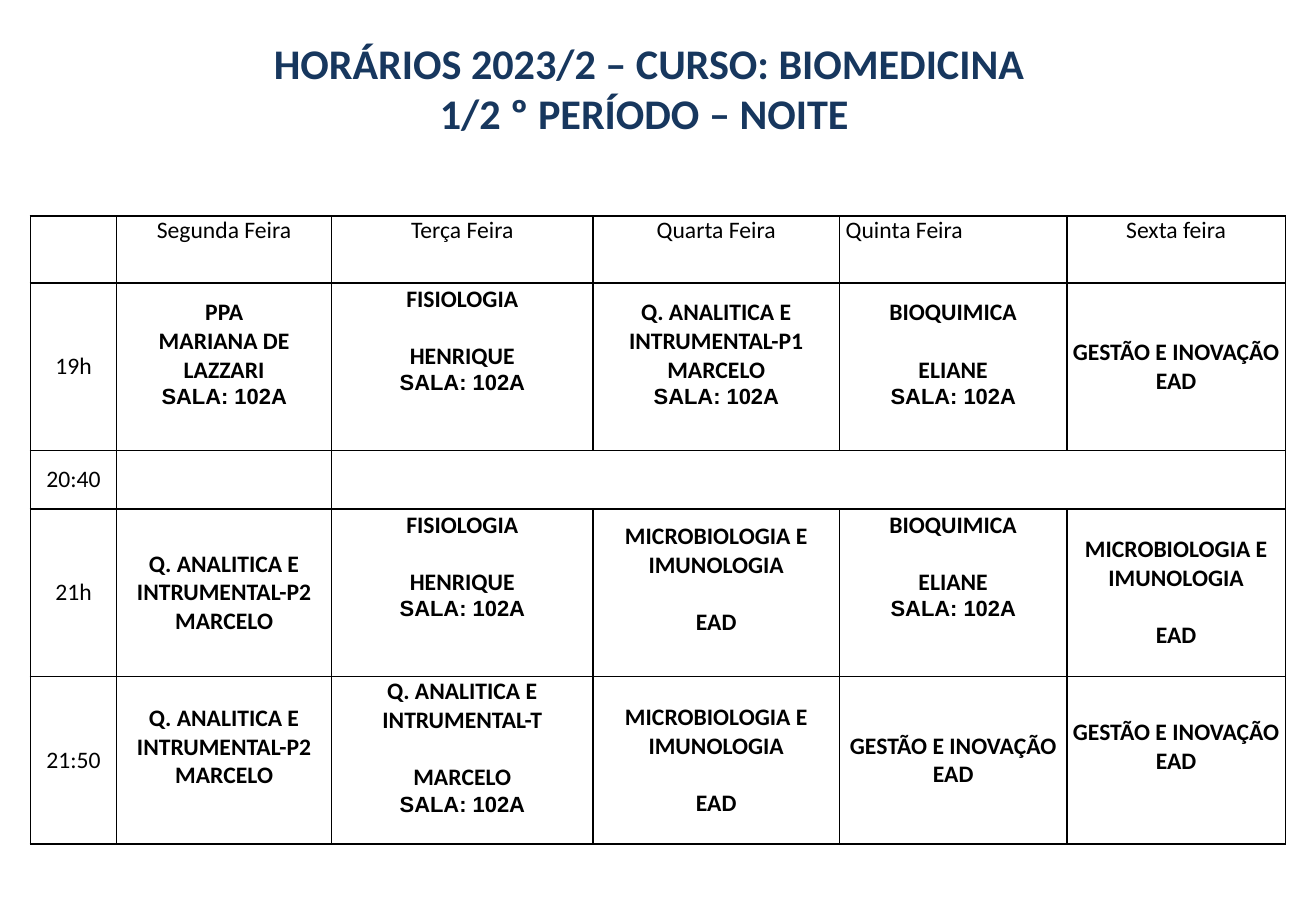
from dataclasses import dataclass

from pptx import Presentation
from pptx import util as u
from pptx.dml.color import RGBColor
from pptx.enum import text
from pptx.oxml import parse_xml
from pptx.oxml.ns import nsdecls


@dataclass(frozen=True)
class Theme:
    navy: str = "17375E"
    ink: str = "000000"
    face: str = "Calibri"
    room_face: str = "Arial"
    title: int = 25
    body: int = 14
    room: int = 13
    gap: int = 17
    rule: float = 1


@dataclass(frozen=True)
class Lesson:
    """One class; gap parts subject from staff, lift counts lines raised from the middle."""
    lines: str
    gap: bool = False
    lift: int = 0


THEME = Theme()
ROOM = "SALA: 102A"
LIFT = 0.22
COLS = [0.71, 1.77, 2.15, 2.03, 1.87, 1.8]
ROWS = [0.55, 1.38, 0.48, 1.38, 1.38]
DAYS = ["Segunda Feira", "Terça Feira", "Quarta Feira", "Quinta Feira", "Sexta feira"]
HOURS = ["19h", "20:40", "21h", "21:50"]
BREAK = 2

ppa = Lesson(f"PPA\nMARIANA DE LAZZARI\n{ROOM}", lift=1)
physio = Lesson(f"FISIOLOGIA\nHENRIQUE\n{ROOM}", True, 2)
chem = "Q. ANALITICA E INTRUMENTAL"
bio = f"BIOQUIMICA\nELIANE\n{ROOM}"
micro = "MICROBIOLOGIA E IMUNOLOGIA\nEAD"
admin = "GESTÃO E INOVAÇÃO\nEAD"
LESSONS = {
    1: [ppa, physio, Lesson(f"{chem}-P1\nMARCELO\n{ROOM}", lift=1),
        Lesson(bio, True, 1), Lesson(admin)],
    3: [Lesson(f"{chem}-P2\nMARCELO"), physio, Lesson(micro, True, 1),
        Lesson(bio, True, 2), Lesson(micro, True)],
    4: [Lesson(f"{chem}-P2\nMARCELO", lift=1),
        Lesson(f"{chem}-T\nMARCELO\n{ROOM}", True, 1),
        Lesson(micro, True), Lesson(admin), Lesson(admin, lift=1)],
}


def style(par, size, color, face=THEME.face, bold=False):
    par.alignment = text.PP_ALIGN.CENTER
    for run in par.runs:
        font = run.font
        font.name, font.size, font.bold = face, u.Pt(size), bold
        font.color.rgb = RGBColor.from_string(color)


def frame(cell):
    """Clear the fill and rule all four sides of a cell."""
    props = cell._tc.get_or_add_tcPr()
    for side in ("lnL", "lnR", "lnT", "lnB"):
        props.append(parse_xml(
            f'<a:{side} {nsdecls("a")} w="{u.Pt(THEME.rule)}"><a:solidFill>'
            f'<a:srgbClr val="{THEME.ink}"/></a:solidFill></a:{side}>'))
    cell.fill.background()


def write(cell, words, bold=False, anchor=text.MSO_ANCHOR.MIDDLE):
    cell.margin_left = cell.margin_right = u.Inches(0.05)
    cell.margin_top = cell.margin_bottom = 0
    cell.vertical_anchor = anchor
    cell.text_frame.text = words
    for par in cell.text_frame.paragraphs:
        if par.text == ROOM:
            style(par, THEME.room, THEME.ink, THEME.room_face, bold)
        else:
            style(par, THEME.body, THEME.ink, bold=bold)


def teach(cell, lesson):
    """Fill a cell with a lesson."""
    write(cell, lesson.lines, True)
    cell.margin_bottom = u.Inches(LIFT * lesson.lift)
    if lesson.gap:
        cell.text_frame.paragraphs[1].space_before = u.Pt(THEME.gap)


def heading(slide, left, top, width, height):
    title = slide.shapes.title
    title.left, title.top = u.Inches(left), u.Inches(top)
    title.width, title.height = u.Inches(width), u.Inches(height)
    body = title.text_frame
    body.text = "HORÁRIOS 2023/2 – CURSO: BIOMEDICINA\n1/2 º PERÍODO – NOITE "
    body.auto_size = text.MSO_AUTO_SIZE.NONE
    body.vertical_anchor = text.MSO_ANCHOR.MIDDLE
    for par in body.paragraphs:
        style(par, THEME.title, THEME.navy, bold=True)


def timetable(slide, left, top):
    table = slide.shapes.add_table(
        len(ROWS), len(COLS), u.Inches(left), u.Inches(top),
        u.Inches(sum(COLS)), u.Inches(sum(ROWS))).table
    table.first_row = table.horz_banding = False
    for col, width in zip(table.columns, COLS):
        col.width = u.Inches(width)
    for row, height in zip(table.rows, ROWS):
        row.height = u.Inches(height)
    for cell in table.iter_cells():
        frame(cell)
    table.cell(BREAK, 2).merge(table.cell(BREAK, len(COLS) - 1))

    for c, day in enumerate(DAYS, 1):
        write(table.cell(0, c), day, anchor=text.MSO_ANCHOR.TOP)
    thursday = table.cell(0, 4).text_frame.paragraphs[0]
    thursday.alignment = text.PP_ALIGN.LEFT
    for r, hour in enumerate(HOURS, 1):
        write(table.cell(r, 0), hour)
    for r, week in LESSONS.items():
        for c, lesson in enumerate(week, 1):
            teach(table.cell(r, c), lesson)


def main():
    deck = Presentation()
    deck.slide_width, deck.slide_height = u.Inches(10.83), u.Inches(7.5)
    slide = deck.slides.add_slide(deck.slide_layouts[5])
    heading(slide, 0.3, 0.25, 10.08, 0.94)
    timetable(slide, 0.25, 1.78)
    deck.save("out.pptx")


if __name__ == "__main__":
    main()
